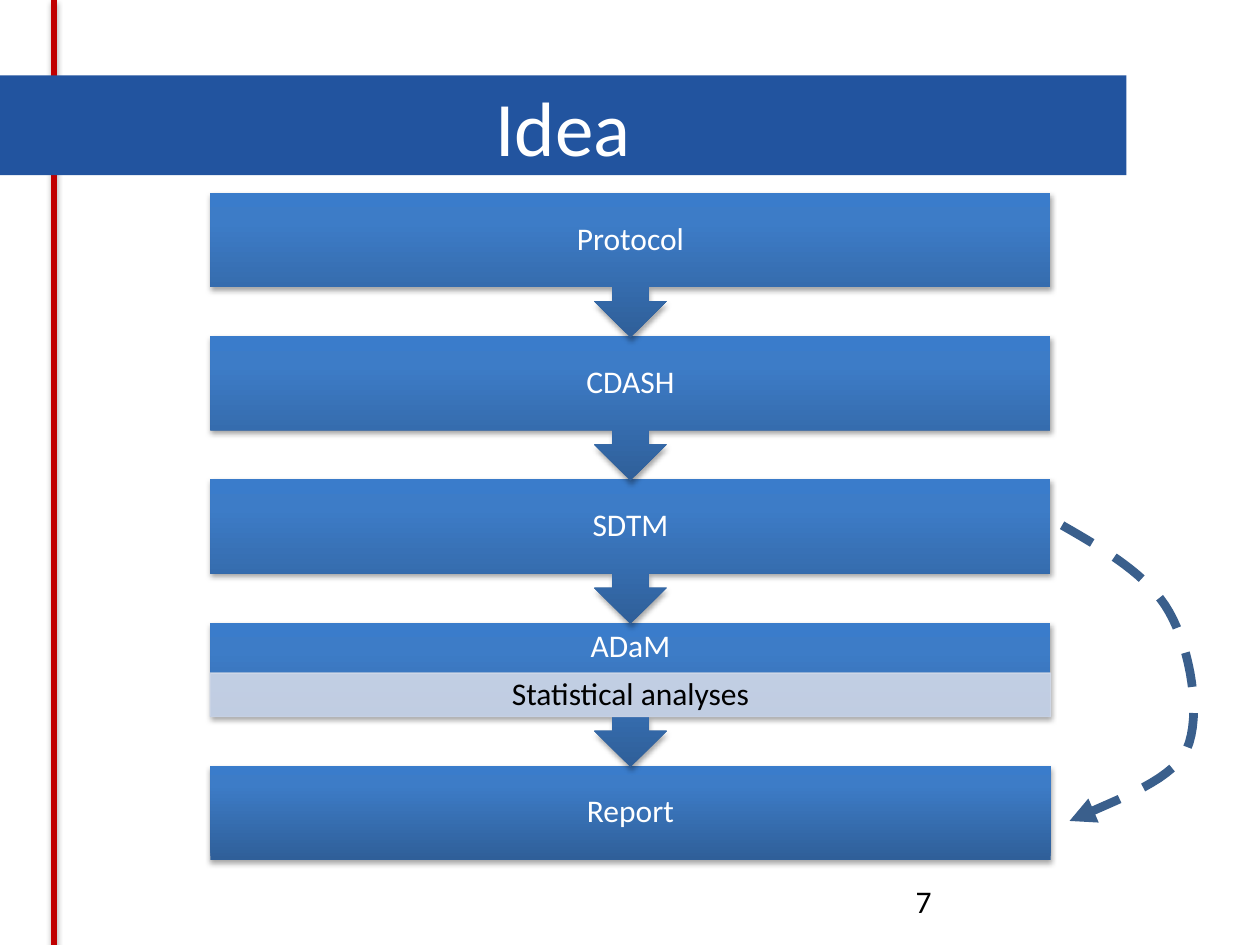
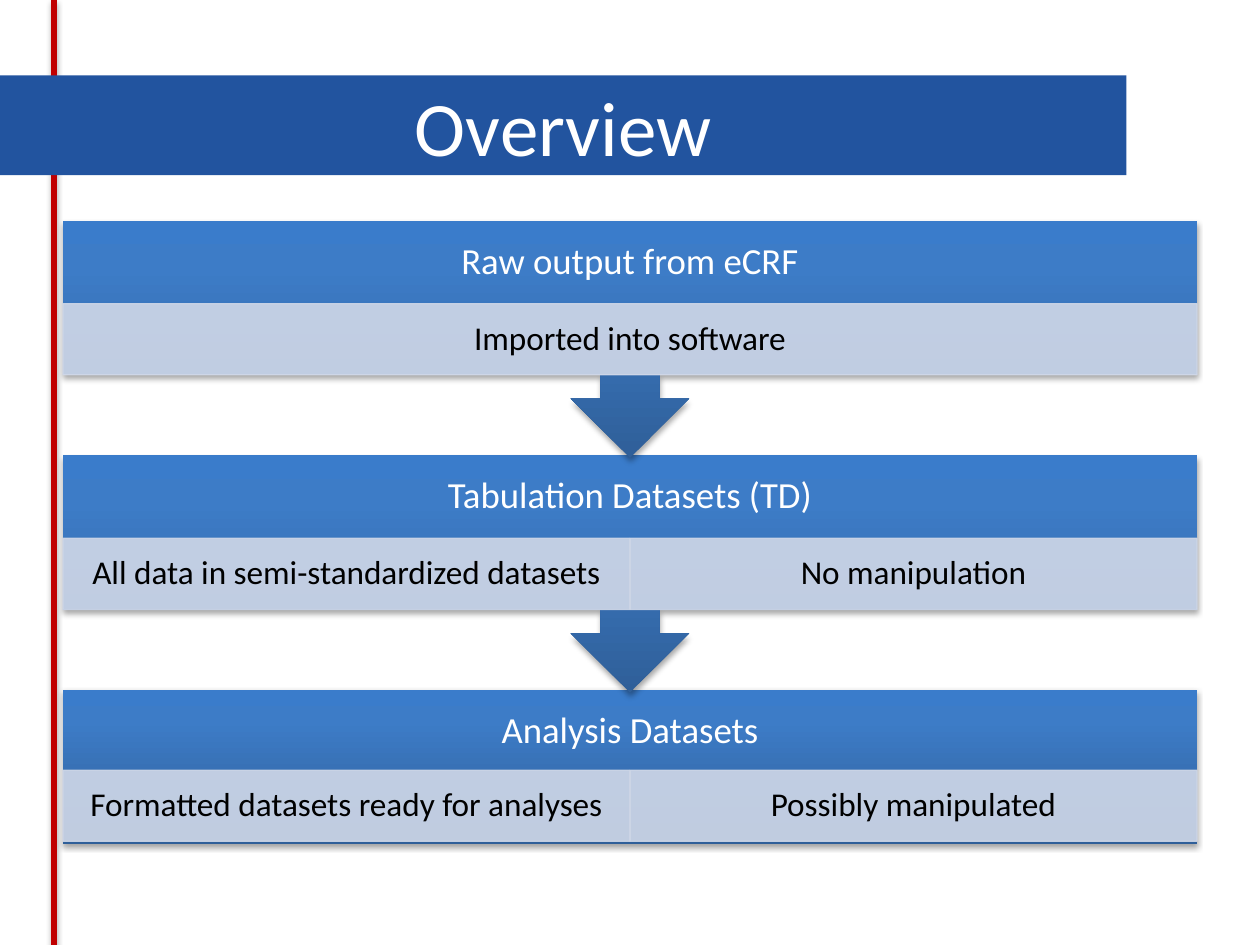
from lxml.etree import SubElement
from pptx import Presentation
from pptx.dml.color import RGBColor
from pptx.enum.dml import MSO_LINE
from pptx.enum.shapes import MSO_CONNECTOR, MSO_SHAPE
from pptx.enum.text import MSO_ANCHOR as Anchor, PP_ALIGN as Align
from pptx.oxml.ns import qn
from pptx.util import Cm, Pt

COLOURS = {
    "band": "22549F", "rule": "C00000", "detail": "D0D8E8", "bypass": "3A5F8C",
    "light": "FFFFFF", "dark": "000000",
}
BLOCK_GRADIENT = [(0, "2F5F99"), (80, "3D7CC7"), (100, "3A7CCB")]
FONT = "Calibri"
PAGE_WIDTH, PAGE_HEIGHT = 25.4, 19.05
BODY_SHARE = 0.65
CALLOUT_OVERLAP = 1.01


def colour(name):
    """Return the named colour."""
    return RGBColor.from_string(COLOURS[name])


def place(box):
    """Turn a box in centimetres into lengths."""
    return [Cm(value) for value in box]


def add_shadow(properties):
    """Give shape properties a soft shadow below."""
    effects = properties.find(qn("a:effectLst"))
    if effects is None:
        effects = SubElement(properties, qn("a:effectLst"))
    shadow = SubElement(effects, qn("a:outerShdw"), blurRad="40000", dist="23000",
                        dir="5400000", rotWithShape="0")
    tint = SubElement(shadow, qn("a:srgbClr"), val=COLOURS["dark"])
    SubElement(tint, qn("a:alpha"), val="35000")


def write(shape, text, size, ink, align=Align.CENTER, anchor=Anchor.MIDDLE,
          insets=(0.25, 0.13), spacing=None):
    """Write one styled line of text into a shape."""
    frame = shape.text_frame
    frame.word_wrap = True
    frame.vertical_anchor = anchor
    frame.margin_left = frame.margin_right = Cm(insets[0])
    frame.margin_top = frame.margin_bottom = Cm(insets[1])
    para = frame.paragraphs[0]
    para.alignment = align
    para.line_spacing = spacing
    span = para.add_run()
    span.text = text
    span.font.name = FONT
    span.font.size = Pt(size)
    span.font.color.rgb = colour(ink)


def add_plain_shape(page, kind, box):
    """Add a preset shape without outline or shadow."""
    shape = page.shapes.add_shape(kind, *place(box))
    shape.shadow.inherit = False
    shape.line.fill.background()
    return shape


def add_block(page, kind, box):
    """Add a gradient block with a shadow."""
    block = add_plain_shape(page, kind, box)
    block.fill.gradient()
    block.fill.gradient_angle = 90
    properties = block._element.spPr
    stops = properties.find(".//" + qn("a:gsLst"))
    stops.clear()
    for position, value in BLOCK_GRADIENT:
        stop = SubElement(stops, qn("a:gs"), pos=str(position * 1000))
        SubElement(stop, qn("a:srgbClr"), val=value)
    add_shadow(properties)


def add_detail(page, box, text, size):
    """Add a pale, slightly transparent detail cell."""
    cell = add_plain_shape(page, MSO_SHAPE.RECTANGLE, box)
    cell.fill.solid()
    cell.fill.fore_color.rgb = colour("detail")
    cell.line.color.rgb = colour("detail")
    cell.line.width = Pt(0.75)
    for tint in cell._element.spPr.iter(qn("a:srgbClr")):
        SubElement(tint, qn("a:alpha"), val="90000")
    write(cell, text, size, "dark", insets=(size * 0.02, 0.08), spacing=0.9)


def add_stage(page, box, heading, details, sizes, is_last):
    """Add one stage: its block, heading and row of details."""
    left, top, width, height = box
    if is_last:
        kind, body = MSO_SHAPE.RECTANGLE, height
        heading_share, detail_top, detail_share = 0.54, 0.52, 0.46
    else:
        kind, body = MSO_SHAPE.DOWN_ARROW_CALLOUT, height * BODY_SHARE
        heading_share, detail_top, detail_share = 0.35, 0.35, 0.3
    add_block(page, kind, box)
    heading_height = height * heading_share if details else body
    label = page.shapes.add_textbox(*place((left, top, width, heading_height)))
    write(label, heading, sizes[0], "light", insets=(sizes[0] * 0.02,) * 2, spacing=0.9)
    for index, detail in enumerate(details):
        cell_width = width / len(details)
        cell = (left + index * cell_width, top + height * detail_top,
                cell_width, height * detail_share)
        add_detail(page, cell, detail, sizes[1])


def add_flow(page, box, stages, sizes):
    """Stack the stages evenly in the box, the last one at the back."""
    left, top, width, height = box
    last = len(stages) - 1
    pitch = height / (last + BODY_SHARE * CALLOUT_OVERLAP)
    callout = pitch * CALLOUT_OVERLAP
    for index in range(last, -1, -1):
        is_last = index == last
        stage_height = callout * BODY_SHARE if is_last else callout
        stage_box = (left, top + index * pitch, width, stage_height)
        add_stage(page, stage_box, *stages[index], sizes, is_last)


def bezier(points, steps=16):
    """Return points along a chain of cubic curves."""
    path_points = []
    for first in range(0, len(points) - 1, 3):
        for step in range(1, steps + 1):
            t = step / steps
            weights = ((1 - t) ** 3, 3 * t * (1 - t) ** 2, 3 * t * t * (1 - t), t ** 3)
            path_points.append(tuple(
                sum(weight * point[axis] for weight, point
                    in zip(weights, points[first:first + 4]))
                for axis in (0, 1)))
    return path_points


def add_bypass(page, left, top):
    """Add the dashed arrow that curves past a stage."""
    curve = [(0, 0), (0.89, 0.51), (1.75, 1.02), (2.16, 1.75), (2.59, 2.51),
             (2.82, 3.84), (2.51, 4.52), (2.21, 5.21), (0.76, 5.64), (0.36, 5.89),
             (0.28, 5.92), (0.2, 5.94), (0.15, 5.96)]
    builder = page.shapes.build_freeform(Cm(left), Cm(top))
    builder.add_line_segments(
        [(Cm(left + x), Cm(top + y)) for x, y in bezier(curve)], close=False)
    arrow = builder.convert_to_shape()
    arrow.shadow.inherit = False
    arrow.fill.background()
    arrow.line.color.rgb = colour("bypass")
    arrow.line.width = Pt(5)
    arrow.line.dash_style = MSO_LINE.DASH
    SubElement(arrow.line._get_or_add_ln(), qn("a:tailEnd"), type="triangle")


def add_page(deck, title):
    """Add a page with the red rule and the title band."""
    page = deck.slides.add_slide(deck.slide_layouts[6])
    rule = page.shapes.add_connector(
        MSO_CONNECTOR.STRAIGHT, *place((1.09, 0, 1.09, PAGE_HEIGHT)))
    rule.line.color.rgb = colour("rule")
    rule.line.width = Pt(3)
    add_shadow(rule._element.spPr)
    band = add_plain_shape(page, MSO_SHAPE.RECTANGLE, (0, 1.52, 22.71, 2.01))
    band.fill.solid()
    band.fill.fore_color.rgb = colour("band")
    write(band, title, 44, "light")
    return page


def add_idea_page(deck):
    """Build the page with the path from protocol to report."""
    page = add_page(deck, "Idea")
    number = page.shapes.add_textbox(*place((18.21, 17.65, 5.92, 1.02)))
    write(number, "7", 18, "dark", Align.LEFT, Anchor.TOP)
    stages = [("Protocol", []), ("CDASH", []), ("SDTM", []),
              ("ADaM", ["Statistical analyses"]), ("Report", [])]
    add_flow(page, (4.24, 3.89, 16.94, 13.44), stages, (18, 18))
    add_bypass(page, 21.41, 10.59)


def add_overview_page(deck):
    """Build the page with the dataset stages."""
    page = add_page(deck, "Overview")
    stages = [
        ("Raw output from eCRF", ["Imported into software"]),
        ("Tabulation Datasets (TD)",
         ["All data in semi-standardized datasets", "No manipulation"]),
        ("Analysis Datasets",
         ["Formatted datasets ready for analyses", "Possibly manipulated"]),
    ]
    add_flow(page, (1.27, 4.45, 22.86, 12.57), stages, (21, 19))


def main():
    """Build and save the deck."""
    deck = Presentation()
    deck.slide_width, deck.slide_height = Cm(PAGE_WIDTH), Cm(PAGE_HEIGHT)
    add_idea_page(deck)
    add_overview_page(deck)
    deck.save("out.pptx")


if __name__ == "__main__":
    main()
